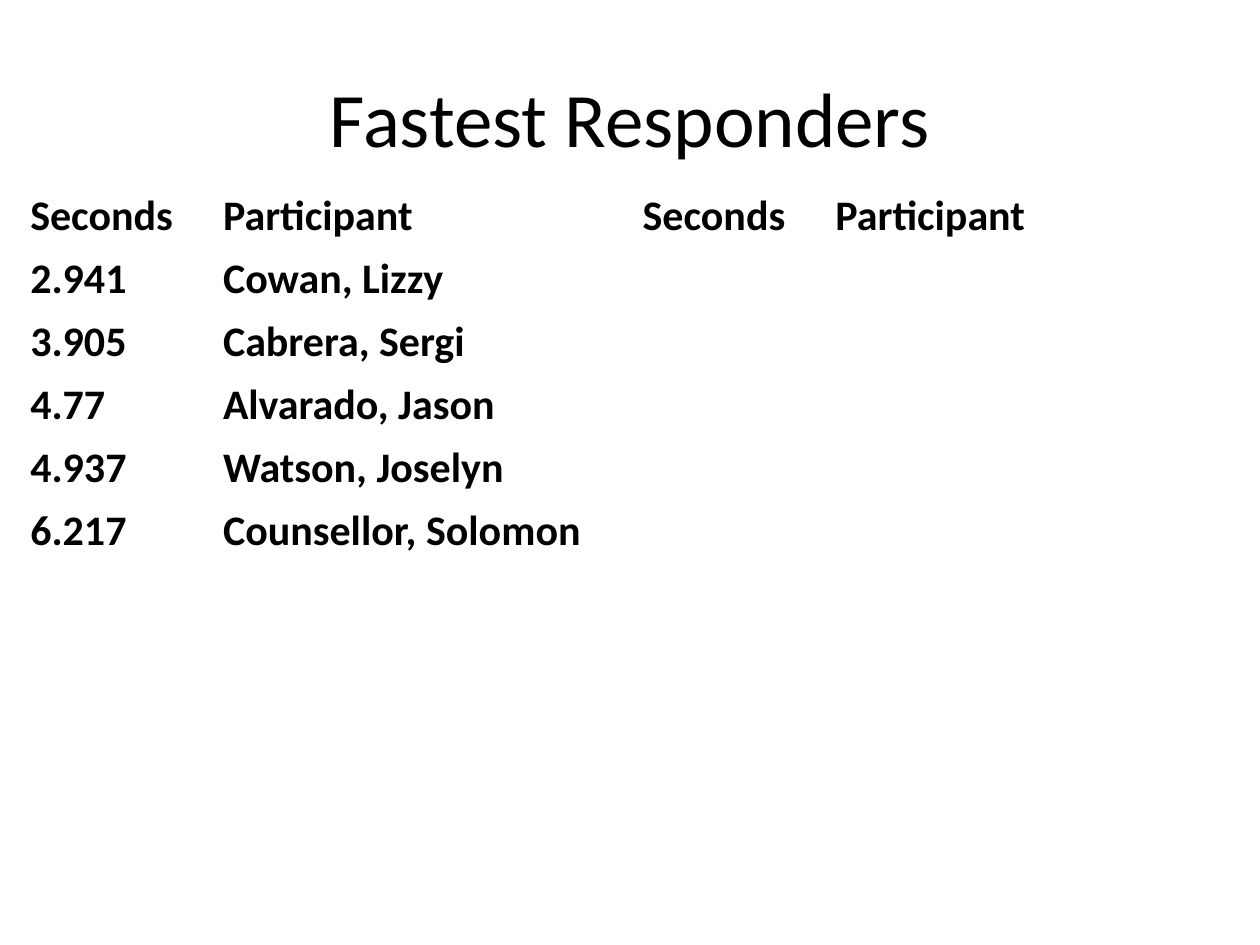
import pptx
import pptx.dml.color
import pptx.enum.text
import pptx.oxml
import pptx.oxml.ns
import pptx.util
from pptx.util import Inches

FONT, BLACK, WHITE = "Calibri", "000000", "FFFFFF"
HEADINGS = ["Seconds", "Participant"] * 2
RESPONDERS = [
    ("2.941", "Cowan, Lizzy"),
    ("3.905", "Cabrera, Sergi"),
    ("4.77", "Alvarado, Jason"),
    ("4.937", "Watson, Joselyn"),
    ("6.217", "Counsellor, Solomon"),
]
ROWS = 11
COLUMN_WIDTHS = [1.53, 3.33] * 2


def rgb(value):
    return pptx.dml.color.RGBColor.from_string(value)


def set_text(p, text, size, bold=False):
    p.text = text
    p.font.name = FONT
    p.font.size = pptx.util.Pt(size)
    p.font.bold = bold
    p.font.color.rgb = rgb(BLACK)


def set_borders(cell, color, widths):
    tcPr = cell._tc.get_or_add_tcPr()
    for side, width in widths.items():
        tcPr.append(pptx.oxml.parse_xml(
            f'<a:ln{side} {pptx.oxml.ns.nsdecls("a")} w="{pptx.util.Pt(width)}">'
            f'<a:solidFill><a:srgbClr val="{color}"/></a:solidFill></a:ln{side}>'))


def add_title(s, left, top, width, height):
    sp = s.shapes.add_textbox(Inches(left), Inches(top), Inches(width), Inches(height))
    tf = sp.text_frame
    tf.word_wrap = True
    tf.vertical_anchor = pptx.enum.text.MSO_ANCHOR.MIDDLE
    p = tf.paragraphs[0]
    set_text(p, "Fastest Responders", 44)
    p.alignment = pptx.enum.text.PP_ALIGN.CENTER


def add_responder_table(s, left, top, width, height):
    table = s.shapes.add_table(ROWS, len(COLUMN_WIDTHS), Inches(left), Inches(top),
                               Inches(width), Inches(height)).table
    table.first_row = table.horz_banding = False
    for column, column_width in zip(table.columns, COLUMN_WIDTHS):
        column.width = Inches(column_width)

    # Cell text, from the top left
    for r, values in enumerate([HEADINGS, *RESPONDERS]):
        for c, value in enumerate(values):
            set_text(table.cell(r, c).text_frame.paragraphs[0], value, 24, bold=True)

    # White grid, heavier under the last row
    for r in range(ROWS):
        bottom = 3 if r == ROWS - 1 else 1
        for c in range(len(COLUMN_WIDTHS)):
            cell = table.cell(r, c)
            set_borders(cell, WHITE, {"L": 1, "R": 1, "T": 1, "B": bottom})
            cell.fill.solid()
            cell.fill.fore_color.rgb = rgb(WHITE)


def main():
    prs = pptx.Presentation()
    prs.slide_width, prs.slide_height = Inches(10), Inches(7.5)
    s = prs.slides.add_slide(prs.slide_layouts[6])
    add_title(s, 0.5, 0.3, 9, 1.25)
    add_responder_table(s, 0.14, 1.46, sum(COLUMN_WIDTHS), 5.5)
    prs.save("out.pptx")


if __name__ == "__main__":
    main()
